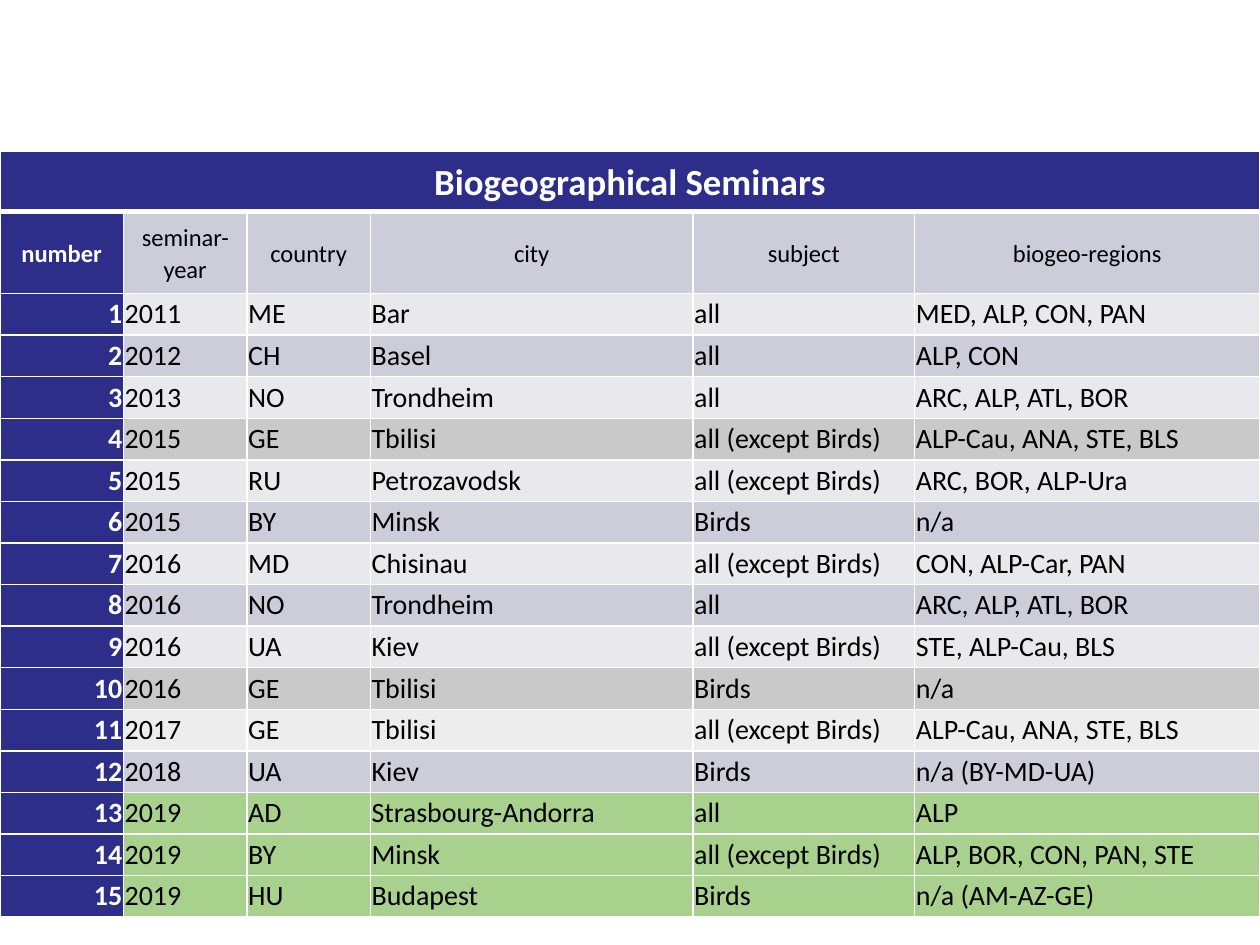
from lxml import etree
from pptx import Presentation
from pptx.dml.color import RGBColor
from pptx.enum.text import MSO_ANCHOR, PP_ALIGN
from pptx.oxml.ns import qn
from pptx.util import Inches, Pt

LEFT, MID, RIGHT = PP_ALIGN.LEFT, PP_ALIGN.CENTER, PP_ALIGN.RIGHT
TOP, CENTRE = MSO_ANCHOR.TOP, MSO_ANCHOR.MIDDLE

NAVY = RGBColor(0x2D, 0x2D, 0x8A)
PALE = RGBColor(0xE8, 0xE8, 0xED)
LILAC = RGBColor(0xCD, 0xCD, 0xDA)
GREY = RGBColor(0xC9, 0xC9, 0xC9)
MIST = RGBColor(0xED, 0xED, 0xED)
GREEN = RGBColor(0xA9, 0xD1, 0x8E)
WHITE = RGBColor(0xFF, 0xFF, 0xFF)
BLACK = RGBColor(0, 0, 0)

TITLE = "Biogeographical Seminars"
HEADS = ["number", "seminar-year", "country", "city", "subject", "biogeo-regions"]
SEMINARS = [
    ("2011", "ME", "Bar", "all", "MED, ALP, CON, PAN"),
    ("2012", "CH", "Basel", "all", "ALP, CON"),
    ("2013", "NO", "Trondheim", "all", "ARC, ALP, ATL, BOR"),
    ("2015", "GE", "Tbilisi", "all (except Birds)", "ALP-Cau, ANA, STE, BLS"),
    ("2015", "RU", "Petrozavodsk", "all (except Birds)", "ARC, BOR, ALP-Ura"),
    ("2015", "BY", "Minsk", "Birds", "n/a"),
    ("2016", "MD", "Chisinau", "all (except Birds)", "CON, ALP-Car, PAN"),
    ("2016", "NO", "Trondheim", "all", "ARC, ALP, ATL, BOR"),
    ("2016", "UA", "Kiev", "all (except Birds)", "STE, ALP-Cau, BLS"),
    ("2016", "GE", "Tbilisi", "Birds", "n/a"),
    ("2017", "GE", "Tbilisi", "all (except Birds)", "ALP-Cau, ANA, STE, BLS"),
    ("2018", "UA", "Kiev", "Birds", "n/a (BY-MD-UA)"),
    ("2019", "AD", "Strasbourg-Andorra", "all", "ALP"),
    ("2019", "BY", "Minsk", "all (except Birds)", "ALP, BOR, CON, PAN, STE"),
    ("2019", "HU", "Budapest", "Birds", "n/a (AM-AZ-GE)"),
]
BANDS = [LILAC, PALE]
MARKED = {4: GREY, 10: GREY, 11: MIST, 13: GREEN, 14: GREEN, 15: GREEN}
WIDTHS = [0.98, 0.98, 0.98, 2.56, 1.76, 2.74]
HEIGHTS = [0.48, 0.65] + [0.33] * len(SEMINARS)


def edge(cell, side, width):
    line = etree.SubElement(cell._tc.get_or_add_tcPr(), qn("a:ln" + side), w=str(Pt(width)))
    fill = etree.SubElement(line, qn("a:solidFill"))
    etree.SubElement(fill, qn("a:srgbClr"), val=str(WHITE))


def fill_cell(cell, text, fill, size, align, anchor, bold, top=1, base=1):
    for side, width in (("L", 1), ("R", 1), ("T", top), ("B", base)):
        edge(cell, side, width)
    cell.fill.solid()
    cell.fill.fore_color.rgb = fill
    cell.margin_left = cell.margin_right = Inches(0.01)
    cell.margin_top = cell.margin_bottom = Inches(0.01)
    cell.vertical_anchor = anchor
    para = cell.text_frame.paragraphs[0]
    para.alignment = align
    para.line_spacing = 1.07
    run = para.add_run()
    run.text = text
    font = run.font
    font.name = "Calibri"
    font.size = Pt(size)
    font.bold = bold
    font.color.rgb = WHITE if bold else BLACK


deck = Presentation()
deck.slide_width, deck.slide_height = Inches(10), Inches(7.5)
slide = deck.slides.add_slide(deck.slide_layouts[6])
frame = slide.shapes.add_table(len(HEIGHTS), len(WIDTHS), Inches(0), Inches(1.2),
                               Inches(sum(WIDTHS)), Inches(sum(HEIGHTS)))
table = frame.table
table.horz_banding = False
for col, width in zip(table.columns, WIDTHS):
    col.width = Inches(width)
for row, height in zip(table.rows, HEIGHTS):
    row.height = Inches(height)

table.cell(0, 0).merge(table.cell(0, len(WIDTHS) - 1))
fill_cell(table.cell(0, 0), TITLE, NAVY, 21, MID, CENTRE, True, base=3)

for c, head in enumerate(HEADS):
    first = c == 0
    fill_cell(table.cell(1, c), head, NAVY if first else LILAC, 14, MID, CENTRE, first, top=3)

for num, facts in enumerate(SEMINARS, 1):
    band = MARKED.get(num, BANDS[num % 2])
    for c, text in enumerate((str(num), *facts)):
        first = c == 0
        fill_cell(table.cell(num + 1, c), text, NAVY if first else band, 16,
                  RIGHT if first else LEFT, TOP, first)

deck.save("out.pptx")
